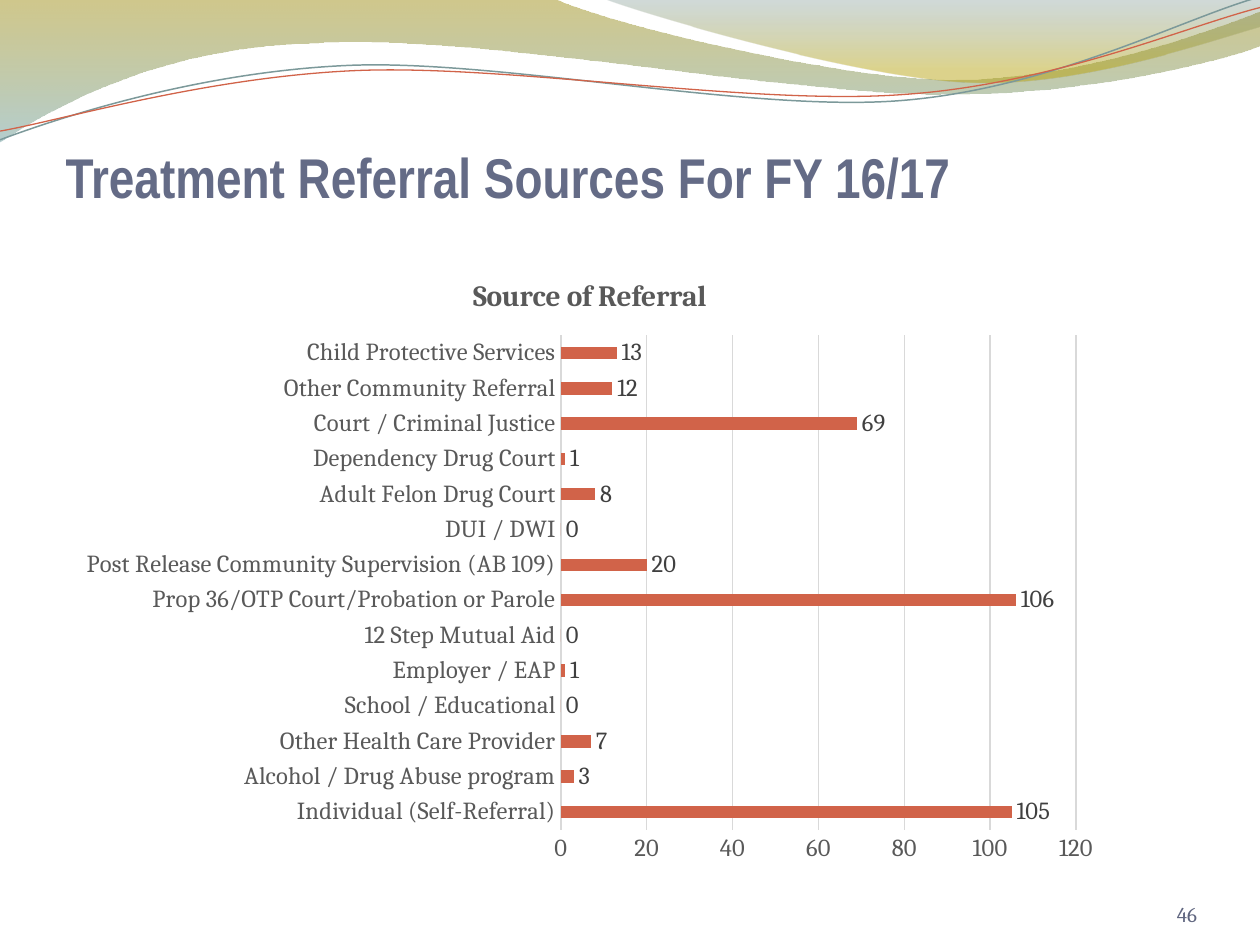
from typing import NamedTuple

from pptx import Presentation
from pptx.chart.data import CategoryChartData
from pptx.dml.color import RGBColor
from pptx.enum.chart import XL_CHART_TYPE as ChartType
from pptx.enum.chart import XL_LABEL_POSITION as LabelPos
from pptx.enum.chart import XL_TICK_MARK as Tick
from pptx.enum.text import MSO_ANCHOR as Anchor
from pptx.enum.text import PP_ALIGN as Align
from pptx.oxml import parse_xml
from pptx.oxml.ns import nsdecls, qn
from pptx.util import Pt

OLIVE = RGBColor(0x97, 0x85, 0x00)
TEAL = RGBColor(0x77, 0xA5, 0xA6)
SLATE = RGBColor(0x64, 0x84, 0x84)
GOLD = RGBColor(0xB4, 0x9F, 0x00)
SAGE = RGBColor(0x7C, 0x99, 0x9A)
RUST = RGBColor(0xD1, 0x63, 0x49)
TITLE_BLUE = RGBColor(0x64, 0x6B, 0x86)
NUMBER_BLUE = RGBColor(0x60, 0x66, 0x80)
GREY = RGBColor(0x59, 0x59, 0x59)
DARK_GREY = RGBColor(0x40, 0x40, 0x40)
GRID_GREY = RGBColor(0xD9, 0xD9, 0xD9)
BLACK = RGBColor(0, 0, 0)


class Stop(NamedTuple):
    pos: int
    color: RGBColor
    alpha: int


class Wave(NamedTuple):
    """Each segment holds one point (a line) or three points (a Bézier curve)."""
    start: tuple
    segments: list
    stops: tuple = ()
    color: RGBColor = BLACK
    width: float = 0


class Label(NamedTuple):
    text: str
    box: tuple
    font: dict
    align: Align
    inset_top: float = 0


WAVES = [
    Wave((0, 0), [
        (316.8, -0.7),
        (342.7, 12.2, 478.1, 45.4, 545.8, 45.4),
        (614.2, 45.4, 689.8, 18.7, 720, 6.5),
        (720.7, 25.9),
        (707.8, 31.7, 626.4, 54.7, 537.1, 54),
        (447.8, 54, 275, 20.2, 185, 24.5),
        (92.9, 25.9, 33.1, 59.8, -0.7, 81.4),
    ], stops=(Stop(0, OLIVE, 45), Stop(100, TEAL, 55))),
    Wave((344.9, -0.7), [
        (366.5, 7.9, 491, 44.6, 553.7, 46.8),
        (616.3, 49.7, 691.9, 23, 720, 15.1),
        (720, 0),
    ], stops=(Stop(0, SLATE, 30), Stop(80, GOLD, 45))),
    Wave((0, 79.9), [
        (34.6, 67, 113.8, 41, 199.4, 37.4),
        (284.4, 33.8, 427, 64.1, 513.4, 57.6),
        (599.8, 51.1, 675.4, 10.8, 718.6, -1.4),
    ], color=SAGE, width=0.85),
    Wave((0, 74.9), [
        (33.8, 69.1, 118.1, 43.9, 203.8, 40.3),
        (290.2, 36.7, 429.8, 60.5, 516.2, 54),
        (601.9, 48.2, 677.5, 15.1, 720, 4.3),
    ], color=RUST, width=0.75),
]

LABELS = [
    Label("Treatment Referral Sources For FY 16/17", (37.5, 72, 648, 48),
          dict(name="Arial Narrow", size=Pt(32), bold=True, color=TITLE_BLUE),
          Align.LEFT, 3.6),
    Label("46", (624, 500.5, 60, 28.8),
          dict(name="Cambria", size=Pt(12), color=NUMBER_BLUE), Align.RIGHT),
]

REFERRALS = {
    "Individual (Self-Referral)": 105,
    "Alcohol / Drug Abuse program": 3,
    "Other Health Care Provider": 7,
    "School / Educational": 0,
    "Employer / EAP": 1,
    "12 Step Mutual Aid": 0,
    "Prop 36/OTP Court/Probation or Parole": 106,
    "Post Release Community Supervision (AB 109)": 20,
    "DUI / DWI": 0,
    "Adult Felon Drug Court": 8,
    "Dependency Drug Court": 1,
    "Court / Criminal Justice": 69,
    "Other Community Referral": 12,
    "Child Protective Services": 13,
}


def set_font(font, values: dict) -> None:
    for key, value in values.items():
        if key == "color":
            font.color.rgb = value
        else:
            setattr(font, key, value)


def gradient(stops: tuple):
    """Top-to-bottom gradient fill with transparent stops."""
    gs = "".join(
        f'<a:gs pos="{s.pos * 1000}"><a:srgbClr val="{s.color}">'
        f'<a:alpha val="{s.alpha * 1000}"/></a:srgbClr></a:gs>' for s in stops)
    return parse_xml(f'<a:gradFill {nsdecls("a")}><a:gsLst>{gs}</a:gsLst>'
                     '<a:lin ang="5400000" scaled="0"/></a:gradFill>')


def bend(sp, segments: list) -> None:
    """Merge the three straight steps of each curve into one Bézier element."""
    steps = iter(list(sp._element.iter(qn("a:lnTo"))))
    for segment in segments:
        first = next(steps)
        if len(segment) == 2:
            continue
        curve = parse_xml(f'<a:cubicBezTo {nsdecls("a")}/>')
        first.addprevious(curve)
        for step in (first, next(steps), next(steps)):
            curve.append(step[0])
            step.getparent().remove(step)


def add_wave(s, wave: Wave) -> None:
    builder = s.shapes.build_freeform(*map(Pt, wave.start))
    for seg in wave.segments:
        points = [(Pt(x), Pt(y)) for x, y in zip(seg[::2], seg[1::2])]
        builder.add_line_segments(points, close=False)
    if wave.stops:
        builder.add_line_segments([], close=True)
    sp = builder.convert_to_shape()
    bend(sp, wave.segments)
    sp.shadow.inherit = False
    sp.fill.background()
    if wave.stops:
        sp.line.fill.background()
        sp_pr = sp._element.spPr
        sp_pr.replace(sp_pr.find(qn("a:noFill")), gradient(wave.stops))
    else:
        sp.line.color.rgb = wave.color
        sp.line.width = Pt(wave.width)


def add_label(s, label: Label) -> None:
    tf = s.shapes.add_textbox(*map(Pt, label.box)).text_frame
    frame = dict(word_wrap=True, vertical_anchor=Anchor.BOTTOM, margin_left=0,
                 margin_right=0, margin_bottom=0, margin_top=Pt(label.inset_top))
    for key, value in frame.items():
        setattr(tf, key, value)
    p = tf.paragraphs[0]
    p.alignment = label.align
    r = p.add_run()
    r.text = label.text
    set_font(r.font, label.font)


def add_referral_chart(s) -> None:
    base = dict(name="Cambria", size=Pt(14), color=BLACK)
    data = CategoryChartData()
    data.categories = list(REFERRALS)
    data.add_series("Source of Referral", list(REFERRALS.values()))
    box = map(Pt, (37.5, 144, 599, 356.5))
    chart = s.shapes.add_chart(ChartType.BAR_CLUSTERED, *box, data).chart
    set_font(chart.font, base)
    chart.has_legend = False
    chart.has_title = True
    p = chart.chart_title.text_frame.paragraphs[0]
    r = p.add_run()
    r.text = "Source of Referral"
    set_font(r.font, base | dict(size=Pt(16.8), bold=True, color=GREY))

    cat, val = chart.category_axis, chart.value_axis
    for axis in (cat, val):
        axis.major_tick_mark = axis.minor_tick_mark = Tick.NONE
        set_font(axis.tick_labels.font, base | dict(color=GREY))
    val.has_major_gridlines = True
    val.format.line.fill.background()
    for line in (cat.format.line, val.major_gridlines.format.line):
        line.color.rgb = GRID_GREY
        line.width = Pt(0.75)

    plot = chart.plots[0]
    plot.gap_width = 182
    plot.vary_by_categories = False
    bars = plot.series[0]
    bars.format.fill.solid()
    bars.format.fill.fore_color.rgb = RUST
    labels = bars.data_labels
    labels.show_value = True
    labels.position = LabelPos.OUTSIDE_END
    set_font(labels.font, base | dict(color=DARK_GREY))


def main() -> None:
    prs = Presentation()
    prs.slide_width, prs.slide_height = Pt(720), Pt(540)
    s = prs.slides.add_slide(prs.slide_layouts[6])
    for wave in WAVES:
        add_wave(s, wave)
    for label in LABELS:
        add_label(s, label)
    add_referral_chart(s)
    prs.save("out.pptx")


if __name__ == "__main__":
    main()
